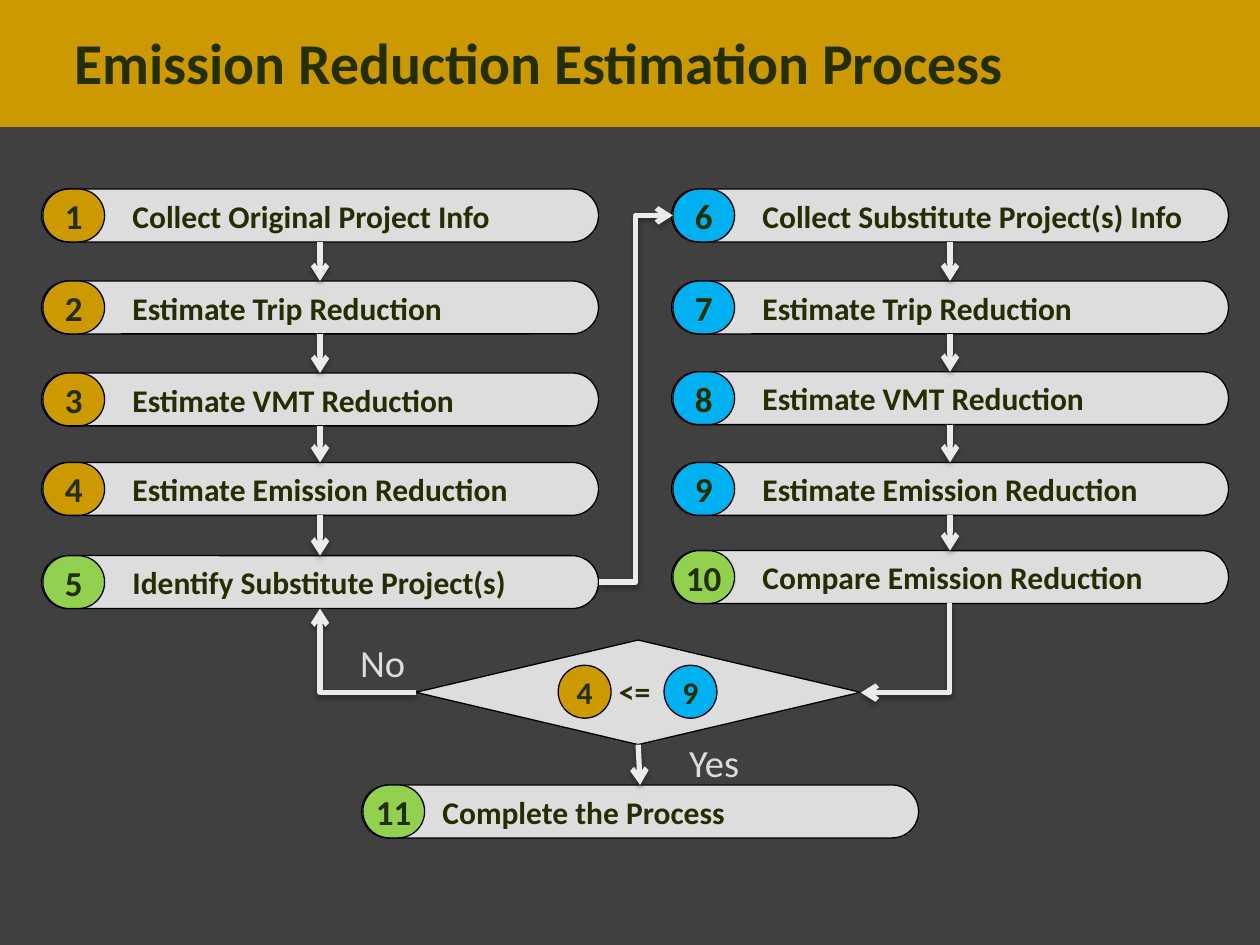
from lxml.etree import SubElement
from pptx import Presentation
from pptx.dml.color import RGBColor
from pptx.enum.shapes import MSO_CONNECTOR, MSO_SHAPE
from pptx.enum.text import MSO_ANCHOR, PP_ALIGN
from pptx.oxml import parse_xml
from pptx.oxml.ns import nsdecls, qn
from pptx.util import Inches, Pt

HUES = {
    "back": "404040", "gold": "CC9900", "blue": "00B0F0", "green": "92D050",
    "bar": "DDDDDD", "ink": "242E03", "edge": "000000", "arrow": "EBEBEB",
}
SHADOW = (
    f'<a:effectLst {nsdecls("a")}><a:outerShdw blurRad="39370" dist="22860" '
    'dir="5400000" rotWithShape="0"><a:srgbClr val="000000">'
    '<a:alpha val="35000"/></a:srgbClr></a:outerShdw></a:effectLst>'
)


def hue(name):
    return RGBColor.from_string(HUES[name])


def write(shape, text, size=18, color="ink", bold=True, align=PP_ALIGN.LEFT,
          anchor=MSO_ANCHOR.TOP, left=0.1, top=0, wrap=True):
    frame = shape.text_frame
    frame.word_wrap = wrap
    frame.vertical_anchor = anchor
    frame.margin_left = Inches(left)
    frame.margin_right = 0
    frame.margin_top = frame.margin_bottom = Inches(top)
    para = frame.paragraphs[0]
    para.alignment = align
    run = para.add_run()
    run.text = text
    run.font.name = "Calibri"
    run.font.size = Pt(size)
    run.font.bold = bold
    run.font.color.rgb = hue(color)


deck = Presentation()
deck.slide_width = Inches(10)
deck.slide_height = Inches(7.5)
slide = deck.slides.add_slide(deck.slide_layouts[6])
slide.background.fill.solid()
slide.background.fill.fore_color.rgb = hue("back")
shapes = slide.shapes


def draw(kind, x, y, wide, high, fill, line="edge"):
    shape = shapes.add_shape(kind, Inches(x), Inches(y), Inches(wide), Inches(high))
    shape.shadow.inherit = False
    shape.fill.solid()
    shape.fill.fore_color.rgb = hue(fill)
    shape.line.color.rgb = hue(line)
    shape.line.width = Pt(0.75)
    if kind == MSO_SHAPE.ROUNDED_RECTANGLE:
        shape.adjustments[0] = 0.5
    return shape


draw(MSO_SHAPE.RECTANGLE, 0, 0, 10, 1, "gold", "gold")
title = shapes.add_textbox(Inches(0.5), Inches(0.17), Inches(9.5), Inches(0.75))
write(title, "Emission Reduction Estimation Process", size=33, left=0.09, top=0.04)

steps = [
    (0.33, 1.5, "gold", "Collect Original Project Info"),
    (0.33, 2.23, "gold", "Estimate Trip Reduction"),
    (0.33, 2.96, "gold", "Estimate VMT Reduction"),
    (0.33, 3.67, "gold", "Estimate Emission Reduction"),
    (0.33, 4.41, "green", "Identify Substitute Project(s)"),
    (5.33, 1.5, "blue", "Collect Substitute Project(s) Info"),
    (5.33, 2.23, "blue", "Estimate Trip Reduction"),
    (5.33, 2.95, "blue", "Estimate VMT Reduction"),
    (5.33, 3.67, "blue", "Estimate Emission Reduction"),
    (5.33, 4.37, "green", "Compare Emission Reduction"),
    (2.87, 6.23, "green", "Complete the Process"),
]
bars, tags = [], []
for num, (x, y, color, text) in enumerate(steps, 1):
    bar = draw(MSO_SHAPE.ROUNDED_RECTANGLE, x, y, 4.42, 0.42, "bar")
    write(bar, text, left=0.58 if num == 11 else 0.66)
    tag = draw(MSO_SHAPE.ROUNDED_RECTANGLE, x + 0.01, y, 0.49, 0.42, color)
    write(tag, str(num), size=20, align=PP_ALIGN.CENTER,
          anchor=MSO_ANCHOR.MIDDLE, left=0)
    bars.append(bar)
    tags.append(tag)

test = draw(MSO_SHAPE.DIAMOND, 3.3, 5.08, 3.53, 0.83, "bar")
write(test, "<=", left=0.73, top=0.05)
for x, color, text in [(4.43, "gold", "4"), (5.27, "blue", "9")]:
    dot = draw(MSO_SHAPE.OVAL, x, 5.28, 0.42, 0.42, color)
    write(dot, text, align=PP_ALIGN.CENTER, anchor=MSO_ANCHOR.MIDDLE, left=0)

links = [(bars[n], 2, bars[n + 1], 0, "line") for n in (0, 1, 2, 3, 5, 6, 7, 8)]
links += [
    (bars[4], 3, tags[5], 1, "bentConnector3"),
    (test, 2, bars[10], 0, "line"),
    (bars[9], 2, test, 3, "bentConnector2"),
    (test, 1, bars[4], 2, "bentConnector2"),
]
for start, out, end, into, form in links:
    kind = MSO_CONNECTOR.STRAIGHT if form == "line" else MSO_CONNECTOR.ELBOW
    link = shapes.add_connector(kind, 0, 0, 0, 0)
    link.begin_connect(start, out)
    link.end_connect(end, into)
    link.line.color.rgb = hue("arrow")
    link.line.width = Pt(3)
    SubElement(link.line._get_or_add_ln(), qn("a:tailEnd"), type="arrow")
    props = link._element.spPr
    props.append(parse_xml(SHADOW))
    props.find(qn("a:prstGeom")).set("prst", form)
    if form == "bentConnector2" and out == 2:
        frame = props.find(qn("a:xfrm"))
        frame.attrib.pop("flipH", None)
        frame.set("rot", "5400000")

for x, y, wide, text in [(5.37, 5.82, 0.61, "Yes"), (2.76, 5.02, 0.56, "No")]:
    note = shapes.add_textbox(Inches(x), Inches(y), Inches(wide), Inches(0.47))
    write(note, text, size=22, color="bar", bold=False, top=0.05, wrap=False)

deck.save("out.pptx")
